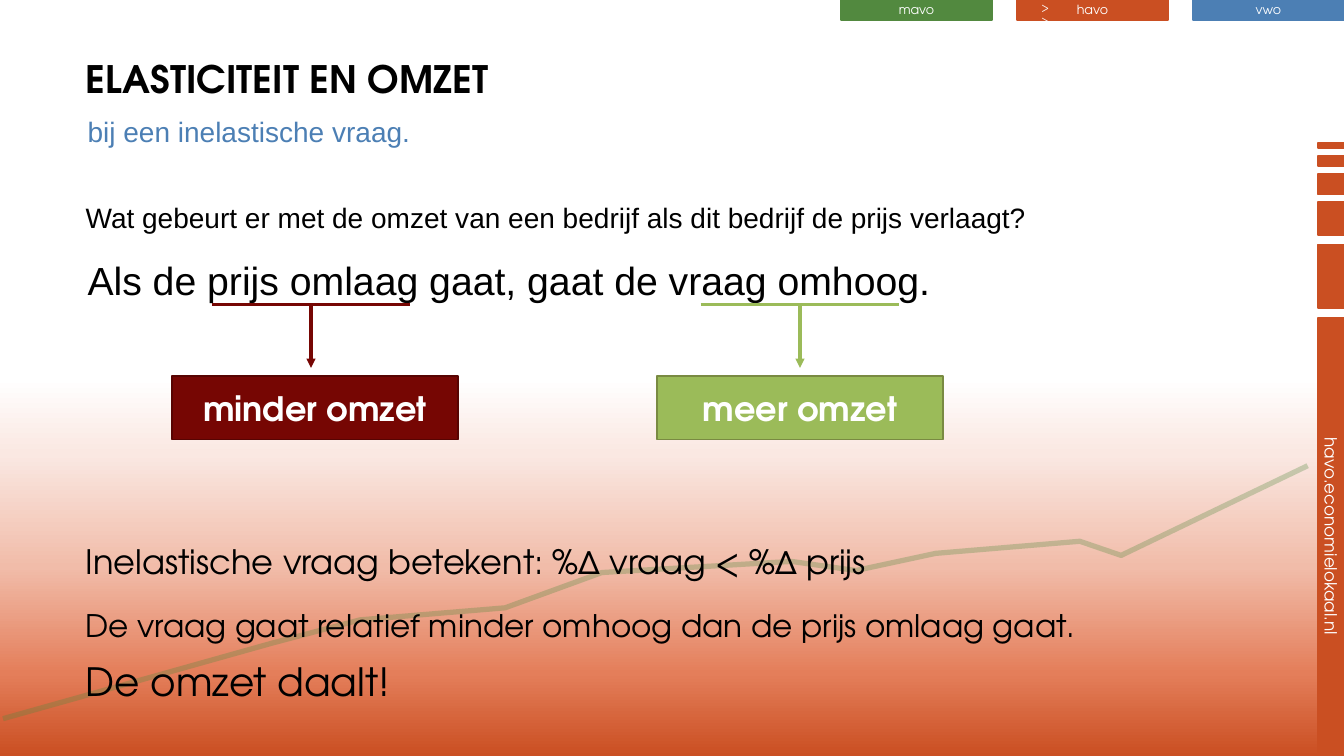
from lxml import etree
from pptx import Presentation
from pptx import util as u
from pptx.dml.color import RGBColor
from pptx.enum import shapes, text
from pptx.oxml.ns import qn

ORANGE, BLUE, GREEN = "CA4F22", "4C7FB4", "52893F"
MAROON, LIME = "760603", "9BBB59"
BLACK, WHITE = "000000", "FFFFFF"
ADVENTOR, ARIAL = "TeX Gyre Adventor", "Arial"


def rgb(value):
    return RGBColor.from_string(value)


class SlideBuilder:
    def __init__(self, s):
        self.s = s

    def background(self, stops):
        fill = self.s.background.fill
        fill.gradient()
        fill.gradient_angle = 90
        stop_list = next(self.s.element.iter(qn("a:gsLst")))
        for old in list(stop_list):
            stop_list.remove(old)
        for position, color in stops:
            stop = etree.SubElement(stop_list, qn("a:gs"), pos=str(position * 1000))
            etree.SubElement(stop, qn("a:srgbClr"), val=color)

    def stroke(self, line, color, width):
        line.color.rgb = rgb(color)
        line.width = u.Pt(width)

    def fill_text(self, tf, lines, font, color, bold=False,
                  align=text.PP_ALIGN.LEFT, before=0, after=0):
        tf.word_wrap = True
        tf.text = "\n".join(words for words, size in lines)
        for i, (p, (words, size)) in enumerate(zip(tf.paragraphs, lines)):
            p.alignment = align
            if i:
                p.space_before = u.Pt(before)
            p.space_after = u.Pt(after)
            for r in p.runs:
                r.font.name = font
                r.font.size = u.Pt(size)
                r.font.bold = bold
                r.font.color.rgb = rgb(color)

    def text(self, x, y, w, h, lines, font=ADVENTOR, color=BLACK, **style):
        sp = self.s.shapes.add_textbox(*map(u.Inches, (x, y, w, h)))
        self.fill_text(sp.text_frame, lines, font, color, **style)

    def box(self, x, y, w, h, fill, border, words="", size=9, bold=False,
            slim=True, rotation=0):
        sp = self.s.shapes.add_shape(shapes.MSO_SHAPE.RECTANGLE,
                                     *map(u.Inches, (x, y, w, h)))
        sp.shadow.inherit = False
        sp.rotation = rotation
        sp.fill.solid()
        sp.fill.fore_color.rgb = rgb(fill)
        self.stroke(sp.line, border, 1.25)
        if words:
            tf = sp.text_frame
            tf.vertical_anchor = text.MSO_ANCHOR.MIDDLE
            if slim:
                tf.margin_top, tf.margin_bottom = 0, u.Inches(0.01)
            self.fill_text(tf, [(words, size)], ADVENTOR, WHITE, bold,
                           text.PP_ALIGN.CENTER)

    def line(self, x1, y1, x2, y2, color, arrow=False):
        sp = self.s.shapes.add_connector(shapes.MSO_CONNECTOR.STRAIGHT,
                                         *map(u.Inches, (x1, y1, x2, y2)))
        self.stroke(sp.line, color, 2.25)
        properties = sp.element.spPr
        if arrow:
            etree.SubElement(properties.find(qn("a:ln")), qn("a:tailEnd"),
                             type="triangle")
        etree.SubElement(properties, qn("a:effectLst"))

    def trend(self, points, color, width, opacity):
        points = [(u.Inches(x), u.Inches(y)) for x, y in points]
        builder = self.s.shapes.build_freeform(*points[0])
        builder.add_line_segments(points[1:], close=False)
        sp = builder.convert_to_shape()
        sp.shadow.inherit = False
        sp.fill.background()
        self.stroke(sp.line, color, width)
        tint = next(sp.element.spPr.find(qn("a:ln")).iter(qn("a:srgbClr")))
        etree.SubElement(tint, qn("a:alpha"), val=str(opacity * 1000))


def main():
    prs = Presentation()
    prs.slide_width, prs.slide_height = u.Inches(13.33), u.Inches(7.5)
    b = SlideBuilder(prs.slides.add_slide(prs.slide_layouts[6]))
    b.background([(0, ORANGE), (11, "E47E5A"), (25, "F1BCA9"),
                  (40, "FAE8E2"), (50, WHITE)])

    for i, (level, color) in enumerate([("mavo", GREEN), ("havo", ORANGE),
                                        ("vwo", BLUE)]):
        b.box(8.34 + 1.745 * i, 0, 1.5, 0.2, color, color, level)

    for middle, length, words in [(5.32, 4.33, "havo.economielokaal.nl"),
                                  (2.74, 0.63, ""), (2.17, 0.33, ""),
                                  (1.83, 0.2, ""), (1.6, 0.1, ""),
                                  (1.44, 0.05, "")]:
        b.box(13.2 - length / 2, middle - 0.13, length, 0.26, ORANGE, ORANGE,
              words, 12, rotation=90)

    b.trend([(12.97, 4.62), (11.12, 5.51), (10.71, 5.37), (9.28, 5.49),
             (8.49, 5.66), (7.85, 5.57), (5.97, 5.68), (5.01, 6.03),
             (3.57, 6.15), (2.7, 6.38), (0.03, 7.13)], GREEN, 3.75, 30)
    b.text(10.23, -0.04, 0.33, 0.23, [(">>", 7.5)], color=WHITE)

    b.text(0.75, 0.5, 10.02, 0.89, [("ELASTICITEIT EN OMZET", 27)], bold=True)
    b.text(0.75, 5.97, 11.2, 1.04,
           [("De vraag gaat relatief minder omhoog dan de prijs omlaag gaat.", 22.2),
            ("De omzet daalt!", 27.8)], before=5.5, after=4.5)
    b.text(0.75, 5.32, 10.95, 0.5,
           [("Inelastische vraag betekent: %Δ vraag < %Δ prijs", 24)])
    b.text(0.75, 1.94, 10.88, 0.53,
           [("Wat gebeurt er met de omzet van een bedrijf als dit bedrijf "
             "de prijs verlaagt?", 20)], ARIAL)
    b.text(0.75, 2.49, 8.59, 0.71,
           [("Als de prijs omlaag gaat, gaat de vraag omhoog.", 28)], ARIAL,
           align=text.PP_ALIGN.CENTER)
    b.text(0.77, 1.09, 4.46, 0.74, [("bij een inelastische vraag.", 20)],
           ARIAL, BLUE)

    for left, words, color, border in [(1.71, "minder omzet", MAROON, "570402"),
                                       (6.52, "meer omzet", LIME, "798A42")]:
        b.box(left, 3.73, 2.83, 0.63, color, border, words, 24, True, slim=False)
    for left, color in [(2.1, MAROON), (6.95, LIME)]:
        middle = left + 0.985
        b.line(left, 3.02, left + 1.97, 3.02, color)
        b.line(middle, 3.02, middle, 3.65, color, arrow=True)

    prs.save("out.pptx")


if __name__ == "__main__":
    main()
